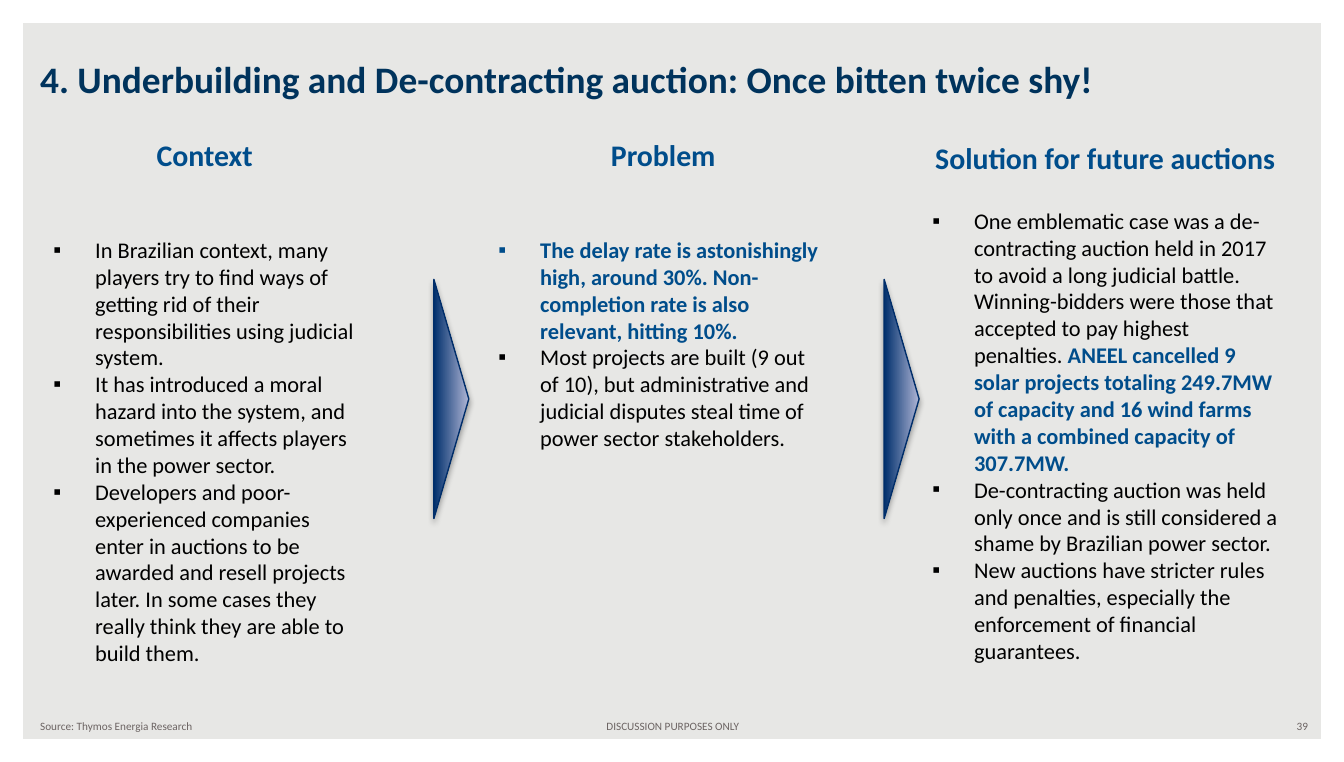
from lxml.etree import SubElement as Sub
from pptx import Presentation
from pptx.dml.color import RGBColor as RGB
from pptx.enum.shapes import MSO_SHAPE as Shape
from pptx.enum.text import MSO_ANCHOR as Anchor, PP_ALIGN as Align
from pptx.oxml.ns import qn
from pptx.util import Cm, Pt

WIDE, HIGH = 25.4, 14.4
COLOR = {"back": "E7E7E5", "white": "FFFFFF", "title": "00335C", "blue": "004D8B",
         "black": "000000", "gray": "6C6463", "edge": "002E6A",
         "dark": "002F6C", "light": "AFB5D5"}

# Each column: box, heading, space under the heading, points.
# A point is a list of (text, strong) pieces.
COLUMNS = [
    ((0.76, 2.46, 6.22, 10.34), "Context", 34, [
        [("In Brazilian context, many players try to find ways of getting rid of "
          "their responsibilities using judicial system.", False)],
        [("It has introduced a moral hazard into the system, and sometimes it "
          "affects players in the power sector.", False)],
        [("Developers and poor-experienced companies enter in auctions to be "
          "awarded and resell projects later. In some cases they really think "
          "they are able to build them.", False)]]),
    ((9.17, 2.46, 6.73, 6.25), "Problem", 34, [
        [("The delay rate is astonishingly high, around 30%. Non-completion rate "
          "is also relevant, hitting 10%.", True)],
        [("Most projects are built (9 out of 10), but administrative and judicial "
          "disputes steal time of power sector stakeholders.", False)]]),
    ((17.37, 2.51, 7.04, 11.46), "Solution for future auctions", 17, [
        [("One emblematic case was a de-contracting auction held in 2017 to avoid "
          "a long judicial battle. Winning-bidders were those that accepted to pay "
          "highest penalties. ", False),
         ("ANEEL cancelled 9 solar projects totaling 249.7MW of capacity and 16 "
          "wind farms with a combined capacity of 307.7MW.", True)],
        [("De-contracting auction was held only once and is still considered a "
          "shame by Brazilian power sector.", False)],
        [("New auctions have stricter rules and penalties, especially the "
          "enforcement of financial guarantees.", False)]]),
]


def tint(name):
    return RGB.from_string(COLOR[name])


def style(font, size, color, bold=False):
    font.name, font.size, font.bold = "Calibri", Pt(size), bold
    font.color.rgb = tint(color)


def add_box(slide, box, anchor=Anchor.TOP):
    frame = slide.shapes.add_textbox(*map(Cm, box)).text_frame
    frame.word_wrap = True
    frame.vertical_anchor = anchor
    return frame


def add_line(slide, box, text, size, color, align=Align.LEFT, bold=False,
             anchor=Anchor.MIDDLE):
    """Add a text box that holds one paragraph."""
    frame = add_box(slide, box, anchor)
    para = frame.paragraphs[0]
    para.text, para.alignment = text, align
    style(para.font, size, color, bold)
    return frame


def add_point(frame, pieces, gap):
    para = frame.add_paragraph()
    para.space_before = Pt(gap)
    props = para._p.get_or_add_pPr()
    props.set("marL", str(Cm(0.79)))
    props.set("indent", str(-Cm(0.79)))
    Sub(props, qn("a:buFont"), typeface="Arial")
    Sub(props, qn("a:buChar"), char="▪")
    looks = {True: ("blue", True), False: ("black", False)}
    style(para.font, 12, *looks[pieces[0][1]])
    for text, strong in pieces:
        run = para.add_run()
        run.text = text
        if len(pieces) > 1:
            style(run.font, 12, *looks[strong])


def add_column(slide, box, head, gap, points):
    frame = add_line(slide, box, head, 16, "blue", Align.CENTER, True, Anchor.TOP)
    for i, pieces in enumerate(points):
        add_point(frame, pieces, 0 if i else gap)


def add_wedge(slide, x, y):
    """Add a triangle that points right, centred on x, y."""
    wide, high = 4.52, 0.66
    wedge = slide.shapes.add_shape(Shape.ISOSCELES_TRIANGLE, Cm(x - wide / 2),
                                   Cm(y - high / 2), Cm(wide), Cm(high))
    wedge.rotation = 90
    wedge.fill.gradient()
    wedge.fill.gradient_angle = 90
    for stop, name in zip(wedge.fill.gradient_stops, ("dark", "light")):
        stop.color.rgb = tint(name)
    wedge.line.color.rgb = tint("edge")
    wedge.line.width = Pt(0.75)
    wedge.shadow.inherit = False
    effects = wedge._element.spPr.find(qn("a:effectLst"))
    shade = Sub(effects, qn("a:outerShdw"), blurRad=str(Pt(3.1)), dist=str(Pt(1.8)),
                dir="5400000", rotWithShape="0")
    color = Sub(shade, qn("a:srgbClr"), val=COLOR["black"])
    Sub(color, qn("a:alpha"), val="35000")


def add_border(slide):
    slide.background.fill.solid()
    slide.background.fill.fore_color.rgb = tint("back")
    border = slide.shapes.add_shape(Shape.FRAME, 0, 0, Cm(WIDE), Cm(HIGH))
    border.adjustments[0] = 0.03
    border.shadow.inherit = False
    border.fill.solid()
    border.fill.fore_color.rgb = tint("white")
    border.line.fill.background()


def add_footer(slide, top):
    for left, wide, text, align in (
            (0.51, 8.05, "Source: Thymos Energia Research", Align.LEFT),
            (8.69, 8.05, "DISCUSSION PURPOSES ONLY", Align.CENTER),
            (19.05, 5.92, "39", Align.RIGHT)):
        add_line(slide, (left, top, wide, 0.51), text, 6, "gray", align)


def main():
    deck = Presentation()
    deck.slide_width, deck.slide_height = Cm(WIDE), Cm(HIGH)
    slide = deck.slides.add_slide(deck.slide_layouts[6])
    add_border(slide)
    add_line(slide, (0.51, 0.43, 23.09, 1.6),
             "4. Underbuilding and De-contracting auction: Once bitten twice shy!",
             20, "title", bold=True, anchor=Anchor.BOTTOM)
    for column in COLUMNS:
        add_column(slide, *column)
    for x in (8.53, 17.04):
        add_wedge(slide, x, 7.54)
    add_footer(slide, 13.47)
    deck.save("out.pptx")


if __name__ == "__main__":
    main()
